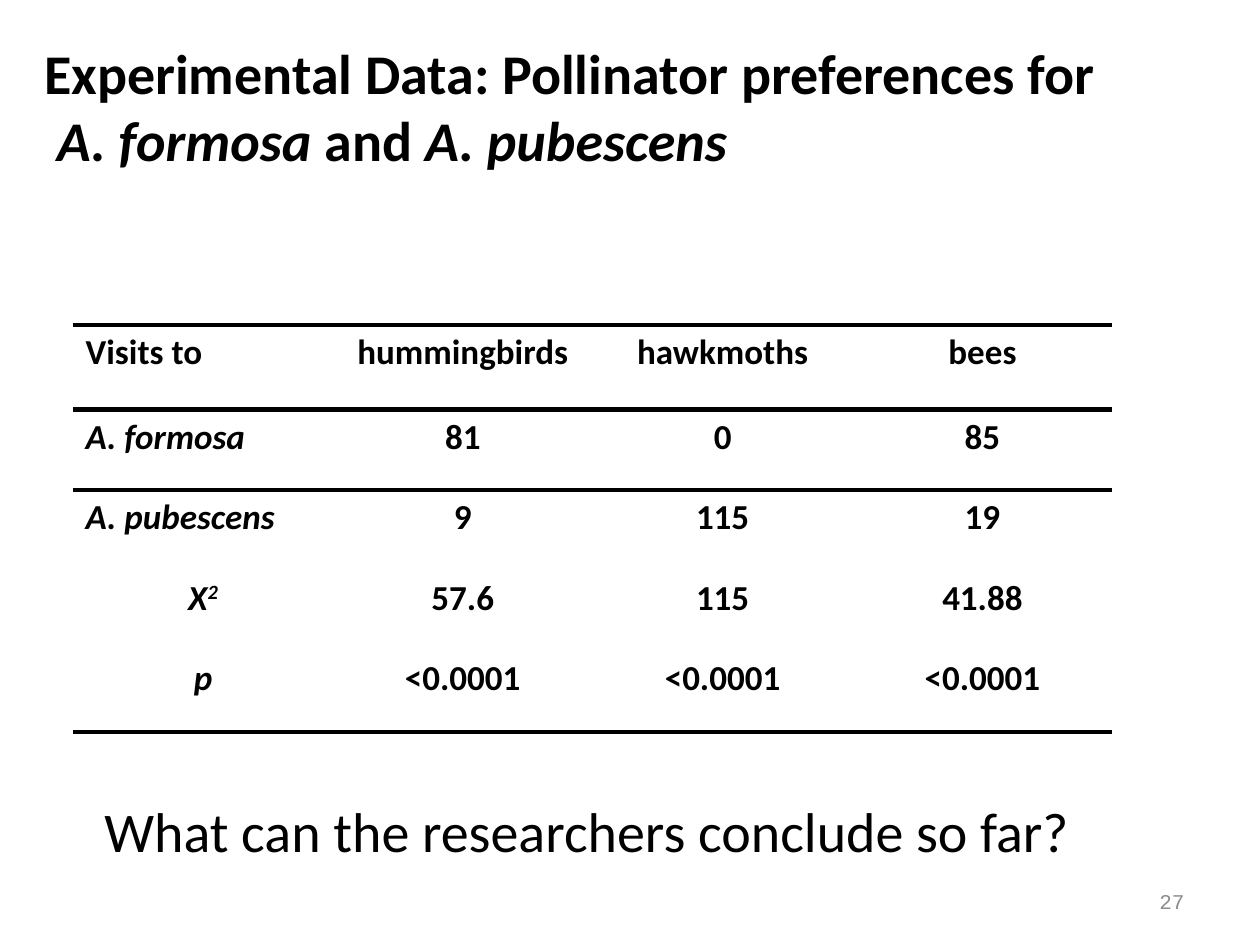
from dataclasses import dataclass
from lxml.etree import SubElement
from pptx import Presentation
from pptx.dml.color import RGBColor
from pptx.enum.text import MSO_ANCHOR, MSO_AUTO_SIZE, PP_ALIGN
from pptx.oxml.ns import qn
from pptx.util import Inches, Pt


@dataclass(frozen=True)
class Theme:
    font: str = "Calibri"
    mono: str = "Courier New"
    ink: str = "000000"
    gray: str = "8C8C8C"
    head: int = 32
    body: int = 20
    small: int = 12
    rule: int = 3
    plain: str = "{2D5ABB26-0587-4C30-8999-92F81FD0307C}"


THEME = Theme()
WIDE, HIGH = Inches(10), Inches(7.5)
LEFT, MID, RIGHT = PP_ALIGN.LEFT, PP_ALIGN.CENTER, PP_ALIGN.RIGHT
ROWS = [
    ["Visits to", "hummingbirds", "hawkmoths", "bees"],
    ["A. formosa", "81", "0", "85"],
    ["A. pubescens", "9", "115", "19"],
    ["Χ", "57.6", "115", "41.88"],
    ["p", "<0.0001", "<0.0001", "<0.0001"],
]


def apply(item, **vals):
    for name, val in vals.items():
        setattr(item, name, val)


def frame(x, y, w, h):
    return {"left": int(x * WIDE), "top": int(y * HIGH),
            "width": int(w * WIDE), "height": int(h * HIGH)}


def write(para, text, size, face=THEME.font, color=THEME.ink, **style):
    run = para.add_run()
    run.text = text
    apply(run.font, size=Pt(size), name=face, **style)
    run.font.color.rgb = RGBColor.from_string(color)
    return run


def add_title(slide):
    title = slide.shapes.title
    apply(title, **frame(0.025, 0, 0.975, 0.223))
    apply(title.text_frame, vertical_anchor=MSO_ANCHOR.MIDDLE,
          word_wrap=True, auto_size=MSO_AUTO_SIZE.NONE)
    para = title.text_frame.paragraphs[0]
    para.alignment = LEFT
    write(para, "Experimental Data: Pollinator preferences for",
          THEME.head, bold=True)
    para.add_line_break()
    for text, slant in ((" A. formosa ", True), ("and ", False),
                        ("A. pubescens", True)):
        write(para, text, THEME.head, bold=True, italic=slant)


def add_text(slide, place, text, size, align, frame_style, **style):
    box = slide.shapes.add_textbox(**place)
    apply(box.text_frame, **frame_style)
    para = box.text_frame.paragraphs[0]
    para.alignment = align
    write(para, text, size, **style)


def add_rule(cell, side):
    line = SubElement(cell._tc.get_or_add_tcPr(), qn("a:" + side),
                      w=str(Pt(THEME.rule)))
    fill = SubElement(line, qn("a:solidFill"))
    SubElement(fill, qn("a:srgbClr"), val=THEME.ink)


def fill_cell(cell, text, row, col):
    if row < 2:
        add_rule(cell, "lnT")
    if row in (0, len(ROWS) - 1):
        add_rule(cell, "lnB")
    cell.fill.background()
    para = cell.text_frame.paragraphs[0]
    apply(para, alignment=LEFT if col == 0 and row < 3 else MID,
          space_before=Pt(0.2 * THEME.body))
    style = {"bold": True, "italic": col == 0 and row > 0}
    write(para, text, THEME.body, **style)
    if text == "Χ":
        power = write(para, "2", THEME.body, **style)
        power.font._element.set("baseline", "30000")


def add_grid(slide):
    place = frame(0.058, 0.344, 0.825, 0.43)
    shape = slide.shapes.add_table(len(ROWS), len(ROWS[0]), **place)
    table = shape.table
    apply(table, first_row=False, horz_banding=False)
    table._tbl.tblPr.find(qn("a:tableStyleId")).text = THEME.plain
    for row, words in enumerate(ROWS):
        table.rows[row].height = Inches(0.64 if row else 0.67)
        for col, text in enumerate(words):
            fill_cell(table.cell(row, col), text, row, col)


def main():
    deck = Presentation()
    apply(deck, slide_width=WIDE, slide_height=HIGH)
    slide = deck.slides.add_slide(deck.slide_layouts[5])
    add_title(slide)
    add_text(slide, frame(0.071, 0.836, 0.79, 0.084),
             "What can the researchers conclude so far?", THEME.head, MID,
             {"word_wrap": False, "auto_size": MSO_AUTO_SIZE.SHAPE_TO_FIT_TEXT})
    add_grid(slide)
    add_text(slide, frame(0.717, 0.927, 0.233, 0.053), "27", THEME.small, RIGHT,
             {"word_wrap": True, "vertical_anchor": MSO_ANCHOR.MIDDLE},
             face=THEME.mono, color=THEME.gray)
    deck.save("out.pptx")


if __name__ == "__main__":
    main()
